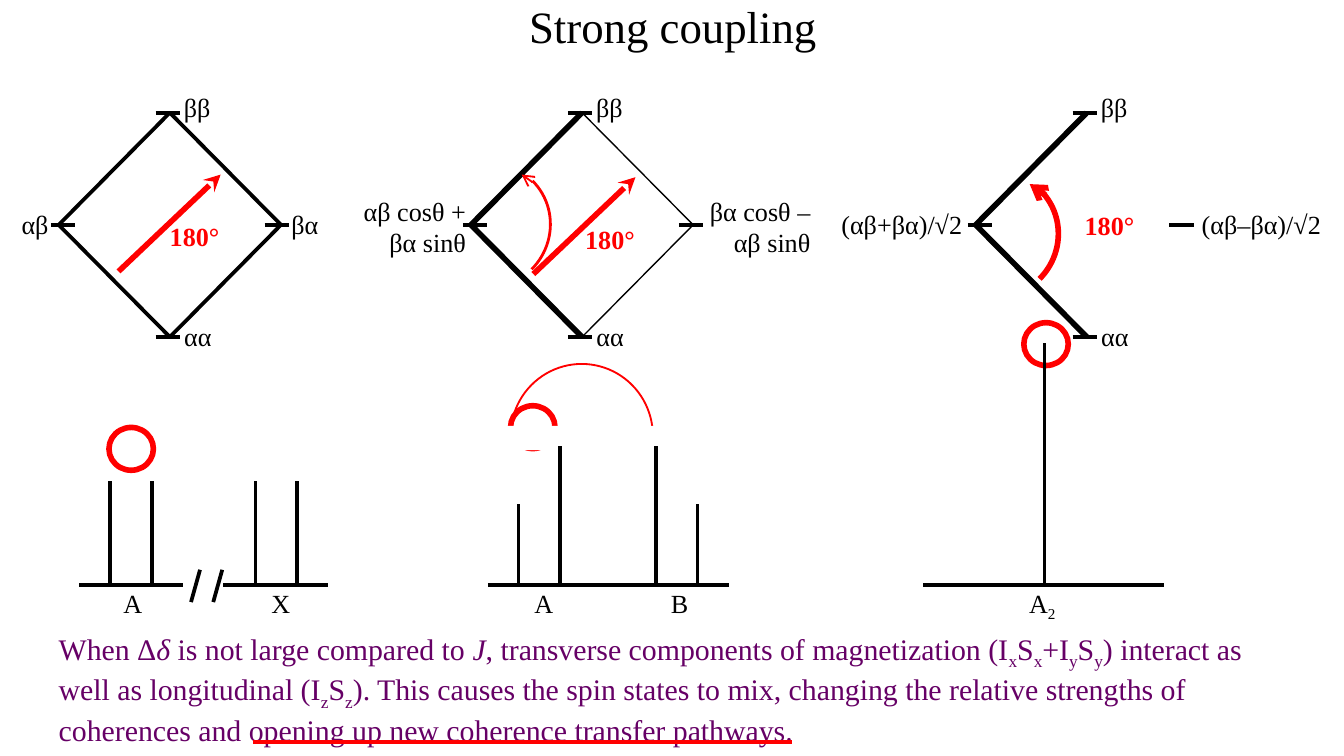
from lxml import etree
from pptx import Presentation
from pptx import util as u
from pptx.dml.color import RGBColor
from pptx.enum import shapes, text
from pptx.oxml.ns import qn

COLORS = {"ink": "000000", "pulse": "FF0000", "body": "660066", "paper": "FFFFFF"}
TOP, MIDDLE, BOTTOM, HALF = 2.13, 4.25, 6.37, 2.1
BASELINE = 11.06


class SlideBuilder:
    font = "Times New Roman"
    label_size = 14
    label_height = 0.86

    def __init__(self, slide):
        self.slide = slide

    def color(self, name):
        return RGBColor.from_string(COLORS[name])

    def style(self, paragraph, size, color, bold=False):
        for run in paragraph.runs:
            run.font.name = self.font
            run.font.size = u.Pt(size)
            run.font.bold = bold
            run.font.color.rgb = self.color(color)

    def title(self, wording, left, top, width, height):
        heading = self.slide.shapes.title
        heading.left, heading.top = u.Cm(left), u.Cm(top)
        heading.width, heading.height = u.Cm(width), u.Cm(height)
        frame = heading.text_frame
        frame.text = wording
        frame.auto_size = text.MSO_AUTO_SIZE.NONE
        frame.vertical_anchor = text.MSO_ANCHOR.MIDDLE
        frame.margin_left = frame.margin_right = u.Cm(0.2)
        frame.margin_top = frame.margin_bottom = 0
        paragraph = frame.paragraphs[0]
        paragraph.alignment = text.PP_ALIGN.CENTER
        paragraph.line_spacing = 1.1
        self.style(paragraph, 24, "ink")

    def box(self, left, top, width, height, wrap):
        frame = self.slide.shapes.add_textbox(
            u.Cm(left), u.Cm(top), u.Cm(width), u.Cm(height)).text_frame
        frame.word_wrap = wrap
        frame.auto_size = text.MSO_AUTO_SIZE.SHAPE_TO_FIT_TEXT
        return frame

    def rich(self, paragraph, marked):
        for piece in marked.split("|"):
            run = paragraph.add_run()
            run.text = piece.lstrip("_*")
            run.font.italic = piece.startswith("*")
            if piece.startswith("_"):
                run.font._element.set("baseline", "-25000")

    def label(self, marked, left, top, width, color="ink", bold=False):
        lines = marked.split("\n")
        height = self.label_height + 0.59 * (len(lines) - 1)
        frame = self.box(left, top, width, height, False)
        for index, line in enumerate(lines):
            paragraph = frame.add_paragraph() if index else frame.paragraphs[0]
            paragraph.alignment = text.PP_ALIGN.RIGHT
            self.rich(paragraph, line)
            self.style(paragraph, self.label_size, color, bold)

    def body(self, marked, left, top, width, height):
        paragraph = self.box(left, top, width, height, True).paragraphs[0]
        self.rich(paragraph, marked)
        self.style(paragraph, 16, "body")

    def line(self, x1, y1, x2, y2, weight=2, color="ink", head=None):
        connector = self.slide.shapes.add_connector(
            shapes.MSO_CONNECTOR.STRAIGHT, u.Cm(x1), u.Cm(y1), u.Cm(x2), u.Cm(y2))
        connector.line.color.rgb = self.color(color)
        connector.line.width = u.Pt(weight)
        properties = connector._element.spPr
        if head:
            etree.SubElement(properties.find(qn("a:ln")), qn("a:tailEnd"), type=head)
        etree.SubElement(properties, qn("a:effectLst"))

    def shape(self, kind, left, top, width, height, weight=0, fill=None, rotation=0):
        outline = self.slide.shapes.add_shape(
            kind, u.Cm(left), u.Cm(top), u.Cm(width), u.Cm(height))
        outline.shadow.inherit = False
        outline.rotation = rotation
        if fill:
            outline.fill.solid()
            outline.fill.fore_color.rgb = self.color(fill)
        else:
            outline.fill.background()
        if weight:
            outline.line.color.rgb = self.color("pulse")
            outline.line.width = u.Pt(weight)
        else:
            outline.line.fill.background()

    def ring(self, left, top, width=0.84, height=0.81, weight=3):
        self.shape(shapes.MSO_SHAPE.OVAL, left, top, width, height, weight)

    def cover(self, left, top, width, height):
        self.shape(shapes.MSO_SHAPE.RECTANGLE, left, top, width, height, fill="paper")

    def transfer_arc(self, left, top, weight, head_weight, tip):
        self.shape(shapes.MSO_SHAPE.ARC, left, top, 2.34, 2.39, weight, rotation=45)
        x, y = tip
        self.line(x + 0.2, y + 0.14, x, y, head_weight, "pulse", "arrow")

    def pulse(self, left, bottom):
        self.line(left, bottom, left + 1.93, bottom - 1.83, 3, "pulse", "stealth")

    def angle(self, left, top):
        self.label("180°", left, top, 1.45, "pulse", True)

    def level(self, x, y):
        self.line(x - 0.23, y, x + 0.23, y)

    def energy_diagram(self, center, left_weight, right_weight, right_level):
        for side, weight in ((-HALF, left_weight), (HALF, right_weight)):
            if weight:
                for end in (TOP, BOTTOM):
                    self.line(center, end, center + side, MIDDLE, weight)
        for x, y in ((center - 2.02, MIDDLE), (right_level, MIDDLE),
                     (center - 0.04, TOP), (center - 0.04, BOTTOM)):
            self.level(x, y)
        self.label("αα", center, 5.94, 1.04)
        self.label("ββ", center, 1.6, 1.02)

    def spectrum(self, axes, peaks):
        for start, end in axes:
            self.line(start, BASELINE, end, BASELINE)
        for x, top in peaks:
            self.line(x, BASELINE, x, top)


def main():
    deck = Presentation()
    deck.slide_width, deck.slide_height = u.Cm(25.4), u.Cm(14.29)
    page = SlideBuilder(deck.slides.add_slide(deck.slide_layouts[5]))

    page.title("Strong coupling", 1.07, -0.05, 23.29, 0.97)
    page.body("When Δ|*δ |is not large compared to |*J|, transverse components of "
              "magnetization (I|_x|S|_x|+I|_y|S|_y|) interact as well as longitudinal "
              "(I|_z|S|_z|). This causes the spin states to mix, changing the relative "
              "strengths of coherences and opening up new coherence transfer pathways.",
              0.86, 11.79, 23.6, 2.31)
    page.line(4.78, 14.02, 14.96, 14.02, 2.25, "pulse")

    for diagram in ((3.21, 2, 2, 5.23), (11, 3, 0.75, 13.06), (20.54, 3, None, 22.33)):
        page.energy_diagram(*diagram)
    for state, left, top, width in (
            ("αβ", 0.15, 3.81, 1.02), ("βα", 5.23, 3.81, 1.04),
            ("αβ cosθ +\nβα sinθ", 6.6, 3.56, 2.46),
            ("βα cosθ –\nαβ sinθ", 13.13, 3.56, 2.44),
            ("(αβ+βα)/√2", 15.62, 3.81, 2.82), ("(αβ–βα)/√2", 22.43, 3.81, 2.79)):
        page.label(state, left, top, width)

    page.pulse(2.24, 5.13)
    page.pulse(10.08, 5.18)
    page.transfer_arc(8.05, 3.07, 1.5, 1, (9.86, 3.3))
    page.transfer_arc(17.65, 3.25, 3, 3, (19.46, 3.48))
    for left, top in ((2.95, 4.04), (10.8, 4.09), (20.24, 3.84)):
        page.angle(left, top)

    page.ring(2.06, 8.08)
    page.ring(19.35, 6.1)
    page.ring(9.65, 6.88, 2.69, 2.72, 1)
    page.cover(9.45, 8.05, 3.2, 1.7)
    page.ring(9.65, 7.67)
    page.cover(9.55, 8.05, 1.07, 0.46)

    page.spectrum([(1.5, 3.45), (4.22, 6.2)],
                  [(x, 9.09) for x in (2.08, 2.87, 4.83, 5.61)])
    for x in (3.78, 4.2):
        page.line(x, 10.77, x - 0.17, 11.38)
    page.spectrum([(9.22, 12.01), (11.81, 13.77)],
                  [(9.8, 9.53), (10.59, 8.43), (12.4, 8.43), (13.18, 9.53)])
    page.spectrum([(17.45, 20.27), (20.04, 22)], [(19.74, 6.48)])
    for nucleus, left, width in (("A", 2.03, 0.91), ("X", 4.83, 0.91), ("A", 9.8, 0.91),
                                 ("B", 12.42, 0.84), ("A|_2", 19.13, 1.07)):
        page.label(nucleus, left, 10.97, width)

    deck.save("out.pptx")


if __name__ == "__main__":
    main()
